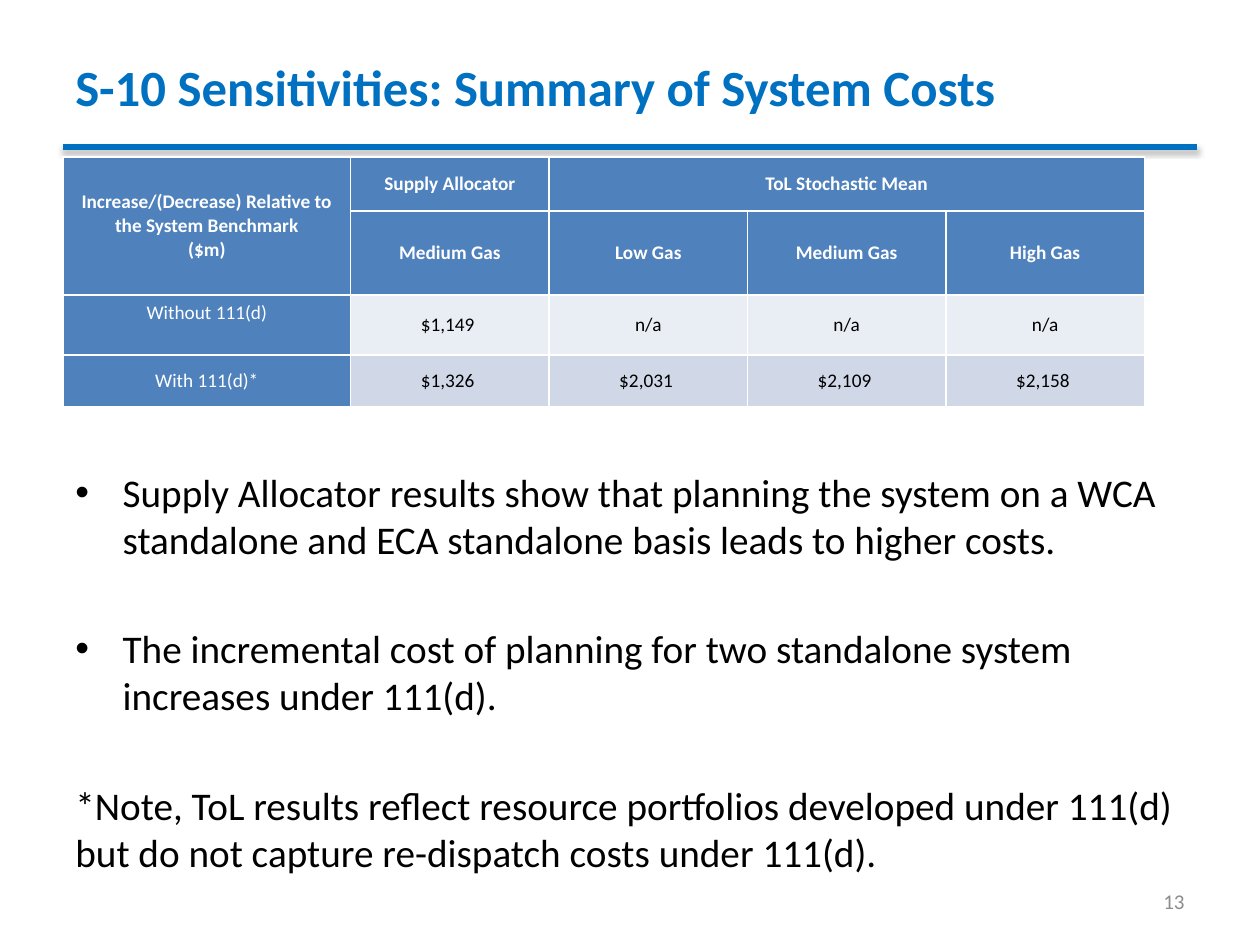
from dataclasses import dataclass

from lxml.etree import SubElement
from pptx import Presentation
from pptx.dml.color import RGBColor
from pptx.enum.shapes import MSO_CONNECTOR
from pptx.enum.text import MSO_ANCHOR, PP_ALIGN
from pptx.oxml.ns import qn
from pptx.util import Pt


@dataclass(frozen=True)
class Theme:
    font: str = "Calibri"
    accent: str = "0070C0"
    header: str = "4F81BD"
    bands: tuple = ("E9EDF4", "D0D8E8")
    white: str = "FFFFFF"
    black: str = "000000"
    muted: str = "8C8C8C"
    title_size: float = 29
    body_size: float = 22.4
    table_size: float = 11
    number_size: float = 12


THEME = Theme()
LEFT, WIDTH = 36, 648

HEADERS = [
    ["Increase/(Decrease) Relative to the System Benchmark\n($m)",
     "Supply Allocator", "ToL Stochastic Mean", "", ""],
    ["", "Medium Gas", "Low Gas", "Medium Gas", "High Gas"],
]
COSTS = [
    ["Without 111(d)", "$1,149 ", "n/a", "n/a", "n/a"],
    ["With 111(d)*", "$1,326 ", "$2,031 ", "$2,109 ", "$2,158 "],
]
COLUMN_WIDTHS = [164.4] + [113.4] * 4
ROW_HEIGHTS = [30.8, 48, 34.2, 29.8]

FINDINGS = [
    "Supply Allocator results show that planning the system on a WCA "
    "standalone and ECA standalone basis leads to higher costs.",
    "The incremental cost of planning for two standalone system "
    "increases under 111(d).",
]
NOTE = ("*Note, ToL results reflect resource portfolios developed under 111(d) "
        "but do not capture re-dispatch costs under 111(d).")


def style_text(tf, size, color, bold=False, align=PP_ALIGN.LEFT):
    for p in tf.paragraphs:
        p.alignment = align
        for r in p.runs:
            r.font.name = THEME.font
            r.font.size = Pt(size)
            r.font.bold = bold
            r.font.color.rgb = RGBColor.from_string(color)


def add_text(s, text, left, top, width, height, size, color,
             bold=False, align=PP_ALIGN.LEFT, anchor=MSO_ANCHOR.MIDDLE):
    tf = s.shapes.add_textbox(Pt(left), Pt(top), Pt(width), Pt(height)).text_frame
    tf.word_wrap = True
    tf.vertical_anchor = anchor
    tf.text = text
    style_text(tf, size, color, bold, align)
    return tf


def add_bullet(p, indent):
    pPr = p._p.get_or_add_pPr()
    pPr.set("marL", str(Pt(indent)))
    pPr.set("indent", str(-Pt(indent)))
    SubElement(pPr, qn("a:buFont"), typeface="Arial")
    SubElement(pPr, qn("a:buChar"), char="•")


def add_findings(s):
    tf = add_text(s, "\n".join(FINDINGS + [NOTE]), LEFT, 264, WIDTH, 253,
                  THEME.body_size, THEME.black, anchor=MSO_ANCHOR.TOP)
    for p in tf.paragraphs[:len(FINDINGS)]:
        add_bullet(p, 27)
    for p in tf.paragraphs[1:]:
        p.space_before = Pt(35.7)


def add_title_rule(s, y):
    """Draw the line under the title, with its soft shadow below."""
    rule = s.shapes.add_connector(
        MSO_CONNECTOR.STRAIGHT, Pt(LEFT), Pt(y), Pt(LEFT + WIDTH), Pt(y))
    rule.line.color.rgb = RGBColor.from_string(THEME.accent)
    rule.line.width = Pt(3)
    effects = SubElement(rule._element.spPr, qn("a:effectLst"))
    shadow = SubElement(effects, qn("a:outerShdw"), blurRad=str(Pt(3.1)),
                        dist=str(Pt(1.8)), dir="5400000", rotWithShape="0")
    color = SubElement(shadow, qn("a:srgbClr"), val=THEME.black)
    SubElement(color, qn("a:alpha"), val="35000")


def add_borders(cell):
    tcPr = cell._tc.get_or_add_tcPr()
    for side in ("lnL", "lnR", "lnT", "lnB"):
        ln = SubElement(tcPr, qn(f"a:{side}"), w=str(Pt(1)))
        fill = SubElement(ln, qn("a:solidFill"))
        SubElement(fill, qn("a:srgbClr"), val=THEME.white)


def style_cell(cell, fill, color, bold):
    add_borders(cell)
    cell.fill.solid()
    cell.fill.fore_color.rgb = RGBColor.from_string(fill)
    cell.vertical_anchor = MSO_ANCHOR.MIDDLE
    style_text(cell.text_frame, THEME.table_size, color, bold, PP_ALIGN.CENTER)


def add_cost_table(s):
    rows = HEADERS + COSTS
    table = s.shapes.add_table(
        len(rows), len(COLUMN_WIDTHS), Pt(LEFT), Pt(89.8),
        Pt(sum(COLUMN_WIDTHS)), Pt(sum(ROW_HEIGHTS))).table
    for column, width in zip(table.columns, COLUMN_WIDTHS):
        column.width = Pt(width)
    for row, height in zip(table.rows, ROW_HEIGHTS):
        row.height = Pt(height)
    table.cell(0, 0).merge(table.cell(1, 0))
    table.cell(0, 2).merge(table.cell(0, 4))

    for i, row in enumerate(rows):
        for j, text in enumerate(row):
            cell = table.cell(i, j)
            cell.text = text
            is_header = i < len(HEADERS)
            if is_header or j == 0:
                style_cell(cell, THEME.header, THEME.white, is_header)
            else:
                band = THEME.bands[i - len(HEADERS)]
                style_cell(cell, band, THEME.black, False)
            if i > 0 and j > 0:
                cell.margin_left = cell.margin_right = 0
                cell.margin_top = cell.margin_bottom = 0
    table.cell(len(HEADERS), 0).vertical_anchor = MSO_ANCHOR.TOP


def main():
    prs = Presentation()
    prs.slide_width, prs.slide_height = Pt(720), Pt(540)
    s = prs.slides.add_slide(prs.slide_layouts[6])
    add_title_rule(s, 84)
    add_text(s, "S-10 Sensitivities: Summary of System Costs",
             LEFT, 18, WIDTH, 63, THEME.title_size, THEME.accent, bold=True)
    add_findings(s)
    add_text(s, "13", 516, 500.5, 168, 29, THEME.number_size, THEME.muted,
             align=PP_ALIGN.RIGHT)
    add_cost_table(s)
    prs.save("out.pptx")


if __name__ == "__main__":
    main()
